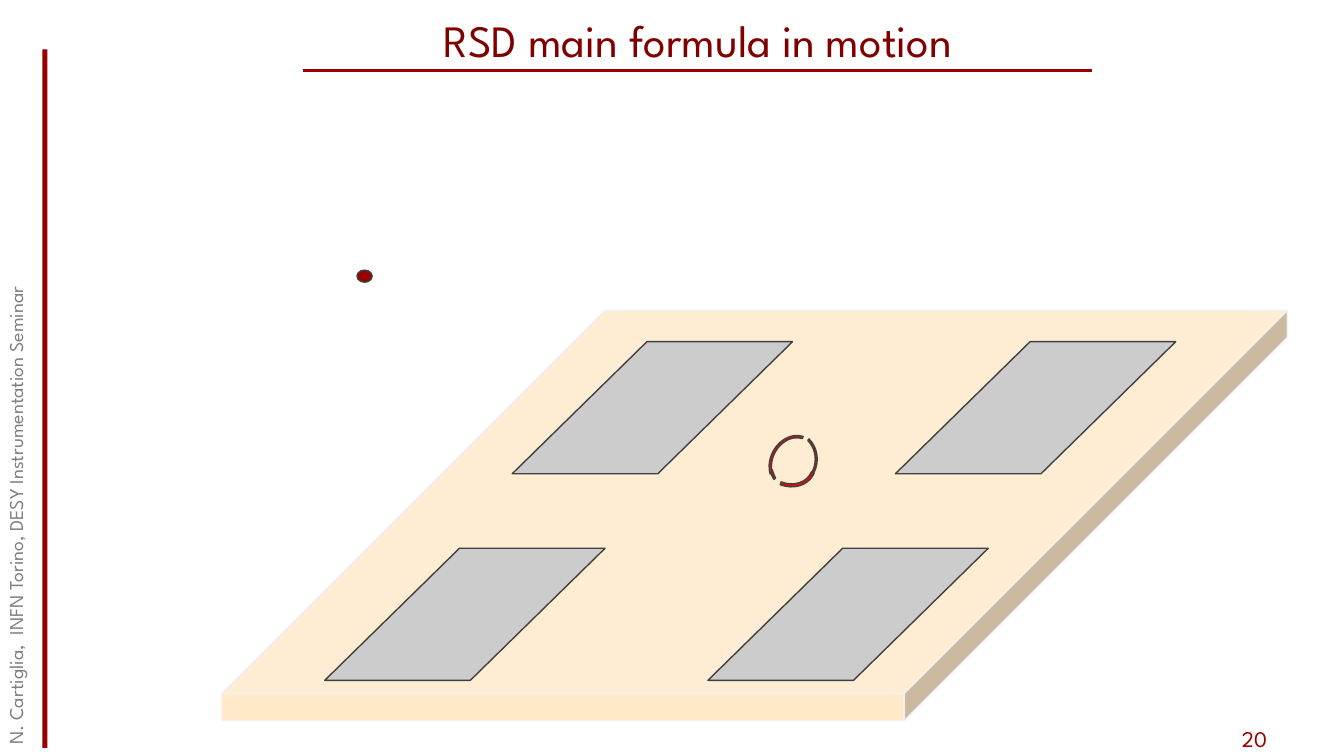
from pptx import Presentation
from pptx.dml.color import RGBColor
from pptx.enum.shapes import MSO_CONNECTOR, MSO_SHAPE
from pptx.enum.text import MSO_ANCHOR, MSO_AUTO_SIZE, PP_ALIGN
from pptx.oxml.ns import qn
from pptx.util import Inches, Pt
from lxml import etree

RECT, OVAL, CUBE = MSO_SHAPE.RECTANGLE, MSO_SHAPE.OVAL, MSO_SHAPE.CUBE
SLANT, ARC = MSO_SHAPE.PARALLELOGRAM, MSO_SHAPE.BLOCK_ARC
STRAIGHT = MSO_CONNECTOR.STRAIGHT
TOP, MIDDLE, BOTTOM = MSO_ANCHOR.TOP, MSO_ANCHOR.MIDDLE, MSO_ANCHOR.BOTTOM
LEFT, CENTER = PP_ALIGN.LEFT, PP_ALIGN.CENTER
FIXED = MSO_AUTO_SIZE.NONE

WIDE, HIGH = Inches(13.33), Inches(7.5)
FONT = "League Spartan"
COLORS = {
    "accent": "990000",
    "title": "800000",
    "side": "808080",
    "slab": "FFE9C8",
    "rim": "F2F2F2",
    "pad": "CCCCCC",
    "edge": "404040",
    "arc": "FF0000",
}

# Pad grid, in percent of the slide's width and height
PAD_LEFT, PAD_TOP = 38.11, 45.2
PAD_WIDE, PAD_HIGH = 20.86, 17.47
COL_STEP, ROW_STEP, ROW_SHIFT = 28.51, 27.33, 13.95

# Box, rotation and adjustments of each arc of the ring
ARCS = [
    ((56.94, 57.47, 4.05, 6.53), 90, (131.58, 184.59, 0.04)),
    ((56.49, 57.73, 4.28, 6.53), 208.9, (105.3, 155.58, 0.06)),
    ((56.86, 58.4, 4.13, 6), 258.8, (144.59, 159.69, 0.05)),
    ((56.94, 58.13, 4.13, 6), 297.7, (128.97, 212.32, 0.05)),
]


def color(name):
    return RGBColor.from_string(COLORS[name])


def place(box):
    """Turn left, top, width and height in percent into lengths."""
    return [int(part * full / 100) for part, full in zip(box, (WIDE, HIGH) * 2)]


def add_form(slide, kind, box, fill, edge=None, turn=0, adjust=()):
    form = slide.shapes.add_shape(kind, *place(box))
    form.shadow.inherit = False
    form.rotation = turn
    form.fill.solid()
    form.fill.fore_color.rgb = color(fill)
    if edge:
        form.line.color.rgb = color(edge)
        form.line.width = Pt(1)
    else:
        form.line.fill.background()
    for index, value in enumerate(adjust):
        form.adjustments[index] = value


def add_rule(slide, start, end):
    rule = slide.shapes.add_connector(STRAIGHT, *place(start + end))
    rule.line.color.rgb = color("accent")
    rule.line.width = Pt(2)
    props = rule._element.find(qn("p:spPr"))
    etree.SubElement(props, qn("a:effectLst"))


def write(shape, text, size, tint, align=LEFT, anchor=TOP):
    frame = shape.text_frame
    frame.word_wrap = True
    frame.auto_size = FIXED
    frame.vertical_anchor = anchor
    line = frame.paragraphs[0]
    line.text = text
    line.alignment = align
    line.font.name = FONT
    line.font.size = Pt(size)
    line.font.color.rgb = color(tint)


def add_text(slide, box, text, size, tint, turn=0, **style):
    shape = slide.shapes.add_textbox(*place(box))
    shape.rotation = turn
    write(shape, text, size, tint, **style)


def set_title(slide, box, text):
    title = slide.shapes.title
    title.left, title.top, title.width, title.height = place(box)
    write(title, text, 32, "title", align=CENTER, anchor=BOTTOM)


def add_frame(slide):
    """Add the side bar, title rule, page number and side note."""
    add_form(slide, RECT, (3.15, 6.53, 0.38, 92.4), "accent")
    add_rule(slide, (22.58, 9.33), (81.25, 9.33))
    add_text(slide, (91.67, 95.33, 6.08, 4.67), "20", 16, "accent", anchor=MIDDLE)
    add_text(slide, (-26.18, 48.4, 54.99, 5.07),
             "N. Cartiglia,  INFN Torino, DESY Instrumentation Seminar",
             14, "side", turn=270)


def add_pads(slide):
    for row in (1, 0):
        for col in (1, 0):
            left = PAD_LEFT + col * COL_STEP - row * ROW_SHIFT
            top = PAD_TOP + row * ROW_STEP
            add_form(slide, SLANT, (left, top, PAD_WIDE, PAD_HIGH),
                     "pad", "edge", adjust=(1.02,))


def main():
    deck = Presentation()
    deck.slide_width, deck.slide_height = WIDE, HIGH
    slide = deck.slides.add_slide(deck.slide_layouts[5])
    add_frame(slide)
    set_title(slide, (3.08, -0.27, 96.92, 9.73), " RSD main formula in motion")
    add_form(slide, CUBE, (16.5, 41.07, 79.29, 54.27), "slab", "rim", adjust=(0.934,))
    add_pads(slide)
    add_form(slide, OVAL, (26.56, 35.73, 1.13, 1.6), "accent", "edge")
    for box, turn, adjust in ARCS:
        add_form(slide, ARC, box, "arc", "edge", turn, adjust)
    deck.save("out.pptx")


if __name__ == "__main__":
    main()
